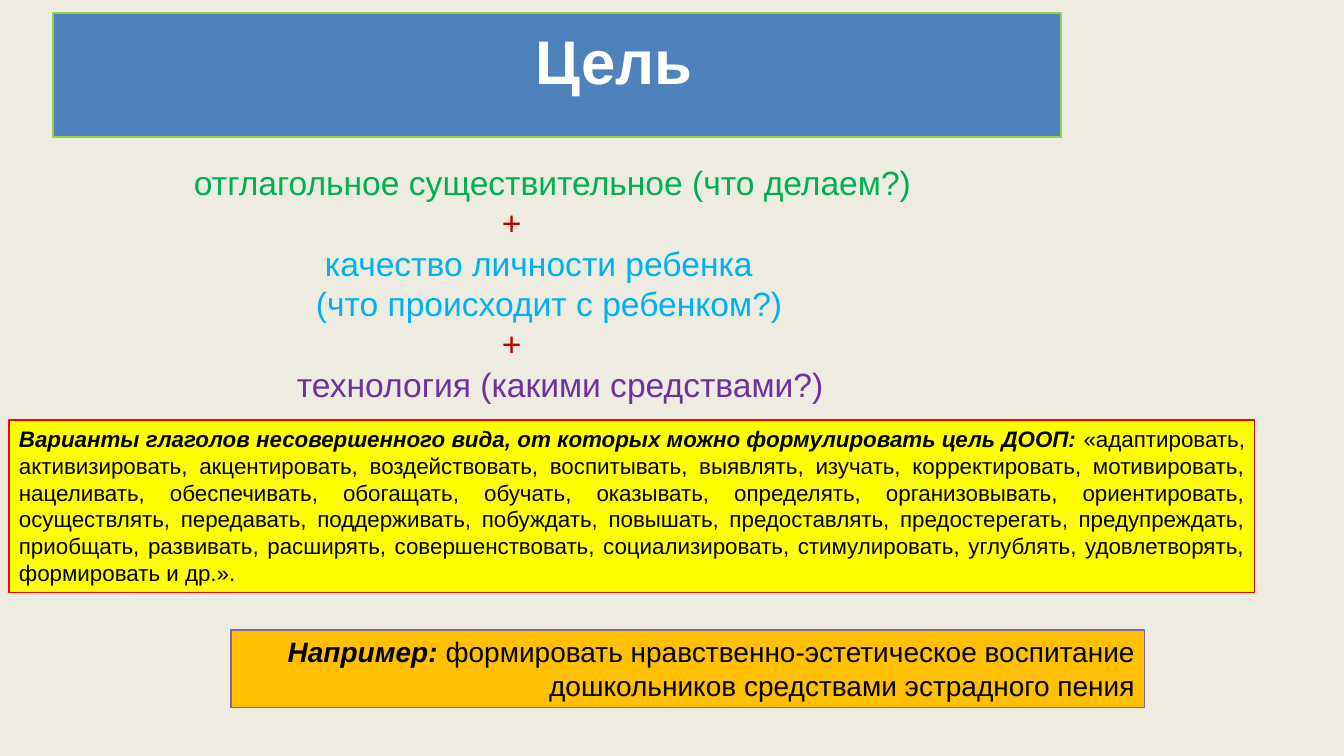
from dataclasses import dataclass

from pptx import Presentation
from pptx.dml.color import RGBColor
from pptx.enum.shapes import MSO_SHAPE
from pptx.enum.text import MSO_ANCHOR, PP_ALIGN
from pptx.util import Emu, Pt


@dataclass(frozen=True)
class Theme:
    """Colours, type sizes and font of the slide."""
    font: str = "Arial"
    back: str = "EEECE1"
    white: str = "FFFFFF"
    black: str = "000000"
    blue: str = "4F81BD"
    lime: str = "92D050"
    green: str = "00B050"
    dark: str = "C00000"
    sky: str = "00B0F0"
    violet: str = "7030A0"
    yellow: str = "FFFF00"
    red: str = "FF0000"
    amber: str = "FFC000"
    plum: str = "8064A2"
    head: int = 44
    body: int = 24
    sample: int = 20
    small: int = 16


THEME = Theme()

FORMULA = [
    ("отглагольное существительное (что делаем?)", 131, THEME.green),
    ("+", 439, THEME.dark),
    ("качество личности ребенка", 262, THEME.sky),
    ("(что происходит с ребенком?)", 253, THEME.sky),
    ("+", 439, THEME.dark),
    ("технология (какими средствами?)", 234, THEME.violet),
]
VERBS = (
    "«адаптировать, активизировать, акцентировать, воздействовать, воспитывать, "
    "выявлять, изучать, корректировать, мотивировать, нацеливать, обеспечивать, "
    "обогащать, обучать, оказывать, определять, организовывать, ориентировать, "
    "осуществлять, передавать, поддерживать, побуждать, повышать, предоставлять, "
    "предостерегать, предупреждать, приобщать, развивать, расширять, "
    "совершенствовать, социализировать, стимулировать, углублять, "
    "удовлетворять, формировать и др.»."
)


def px(count):
    """Turn pixels into EMU."""
    return Emu(round(count * 914400 / 100.8))


def write(para, text, size, color=THEME.black, bold=False, italic=False):
    """Add a formatted run to a paragraph."""
    run = para.add_run()
    run.text = text
    font = run.font
    font.name, font.size = THEME.font, Pt(size)
    font.bold, font.italic = bold, italic
    font.color.rgb = RGBColor.from_string(color)


def panel(slide, box, fill, line, width):
    """Draw a filled and outlined rectangle."""
    shape = slide.shapes.add_shape(MSO_SHAPE.RECTANGLE, *map(px, box))
    shape.shadow.inherit = False
    shape.fill.solid()
    shape.fill.fore_color.rgb = RGBColor.from_string(fill)
    shape.line.color.rgb = RGBColor.from_string(line)
    shape.line.width = Pt(width)
    return shape


def header(slide, box):
    """Place the title on its banner."""
    left, top, width, height = box
    banner = panel(slide, box, THEME.blue, THEME.lime, 2)
    title = slide.shapes.title
    title.left, title.top = px(left + 65), px(top + 3)
    title.width, title.height = px(width - 15), px(height - 37)
    banner._element.addnext(title._element)
    frame = title.text_frame
    frame.vertical_anchor = MSO_ANCHOR.MIDDLE
    para = frame.paragraphs[0]
    para.alignment = PP_ALIGN.CENTER
    write(para, "Цель", THEME.head, color=THEME.white, bold=True)


def formula(slide, box):
    """List the parts of a goal, each line with its own indent."""
    frame = slide.shapes.add_textbox(*map(px, box)).text_frame
    frame.word_wrap = True
    for row, (text, indent, color) in enumerate(FORMULA):
        para = frame.add_paragraph() if row else frame.paragraphs[0]
        para.alignment = PP_ALIGN.LEFT
        para._p.get_or_add_pPr().set("marL", str(px(indent)))
        write(para, text, THEME.body, color=color)


def note(slide, box, lead, text, size, fill, line, align):
    """Place a coloured note with a bold italic lead."""
    frame = panel(slide, box, fill, line, 0.75).text_frame
    frame.word_wrap = True
    frame.vertical_anchor = MSO_ANCHOR.TOP
    para = frame.paragraphs[0]
    para.alignment = align
    write(para, lead + " ", size, bold=True, italic=True)
    write(para, text, size)


def goal(deck):
    """Build the goal slide."""
    slide = deck.slides.add_slide(deck.slide_layouts[5])
    slide.background.fill.solid()
    slide.background.fill.fore_color.rgb = RGBColor.from_string(THEME.back)
    formula(slide, (53, 157, 994, 254))
    header(slide, (53, 13, 1008, 124))
    note(slide, (9, 420, 1246, 173),
         "Варианты глаголов несовершенного вида, от которых можно формулировать цель ДООП:",
         VERBS, THEME.small, THEME.yellow, THEME.red, PP_ALIGN.JUSTIFY)
    note(slide, (231, 630, 914, 78), "Например:",
         "формировать нравственно-эстетическое воспитание дошкольников средствами эстрадного пения",
         THEME.sample, THEME.amber, THEME.plum, PP_ALIGN.RIGHT)


def main():
    """Build and save the deck."""
    deck = Presentation()
    deck.slide_width, deck.slide_height = px(1344), px(756)
    goal(deck)
    deck.save("out.pptx")


if __name__ == "__main__":
    main()
